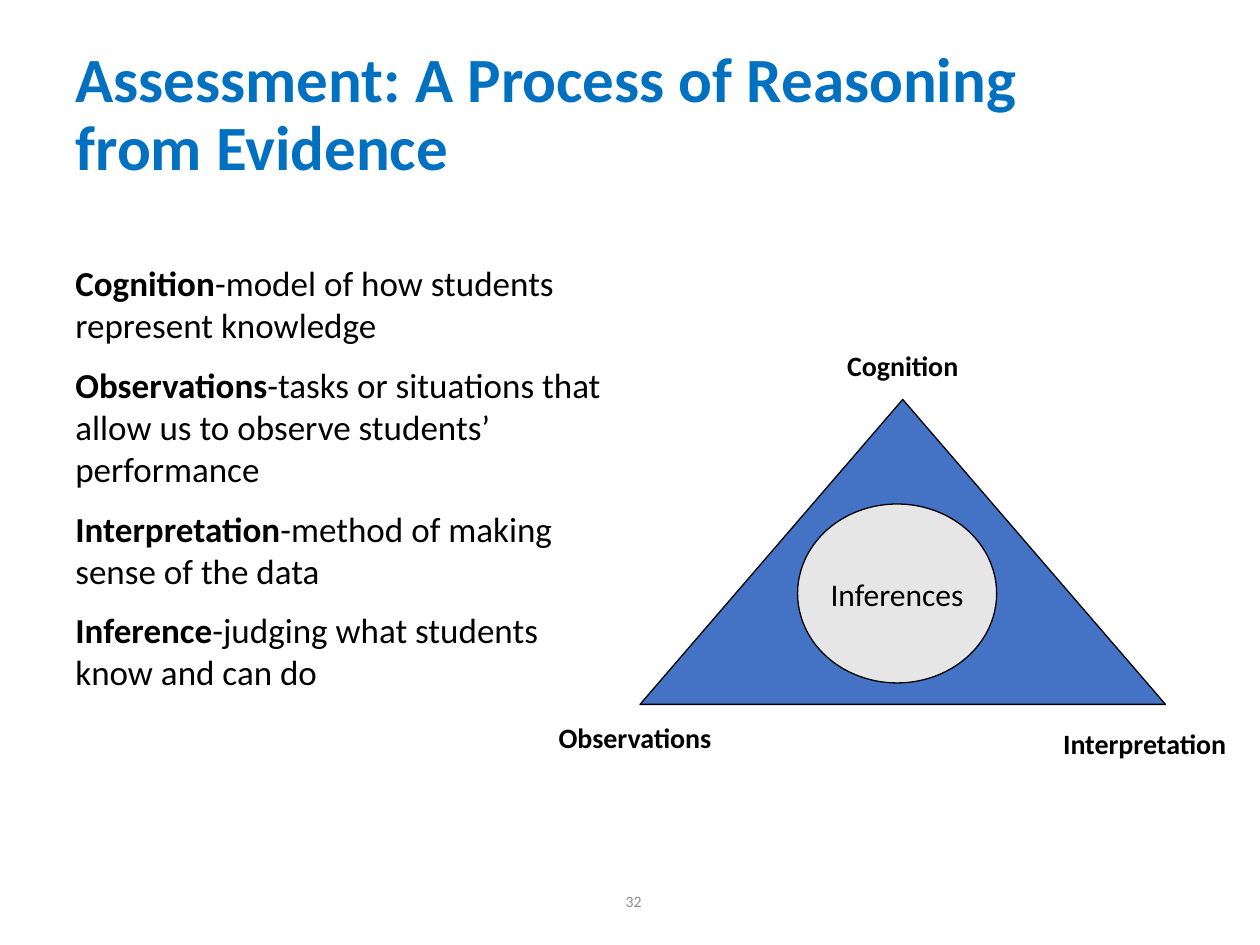
from pptx import Presentation
from pptx import util as u
from pptx.dml import color
from pptx.enum import shapes, text

FONT = "Calibri"
BLUE, BLACK, GREY = "0070C0", "000000", "8C8C8C"


def rgb(value):
    return color.RGBColor.from_string(value)


def add_span(para, words, size=16, bold=False, ink=BLACK):
    """Add one formatted run to a paragraph."""
    span = para.add_run()
    span.text = words
    span.font.name = FONT
    span.font.size = u.Pt(size)
    span.font.bold = bold
    span.font.color.rgb = rgb(ink)
    return span


class SlideBuilder:
    """Holds the style and the current slide."""

    def __init__(self, deck):
        self.page = deck.slides.add_slide(deck.slide_layouts[5])
        self.line_ink = BLACK
        self.line_width = u.Pt(0.75)

    def title(self, lines, left, top, width, height):
        box = self.page.shapes.title
        box.left, box.top = u.Inches(left), u.Inches(top)
        box.width, box.height = u.Inches(width), u.Inches(height)
        box.text_frame.word_wrap = True
        box.text_frame.vertical_anchor = text.MSO_ANCHOR.MIDDLE
        para = box.text_frame.paragraphs[0]
        para.alignment = text.PP_ALIGN.LEFT
        para.line_spacing = 0.9
        for index, line in enumerate(lines):
            if index:
                para.add_line_break()
            add_span(para, line, size=36, bold=True, ink=BLUE)

    def text_box(self, left, top, width, height, anchor=text.MSO_ANCHOR.TOP):
        box = self.page.shapes.add_textbox(
            u.Inches(left), u.Inches(top), u.Inches(width), u.Inches(height))
        box.text_frame.word_wrap = True
        box.text_frame.vertical_anchor = anchor
        return box.text_frame

    def label(self, words, left, top, width, height=0.37):
        para = self.text_box(left, top, width, height).paragraphs[0]
        para.alignment = text.PP_ALIGN.CENTER
        add_span(para, words, bold=True)

    def definitions(self, entries, left, top, width, height):
        frame = self.text_box(left, top, width, height)
        for index, (term, meaning) in enumerate(entries):
            para = frame.add_paragraph() if index else frame.paragraphs[0]
            if index:
                para.space_before = u.Pt(10)
            add_span(para, term, size=20, bold=True)
            add_span(para, "-" + meaning, size=20)

    def page_number(self, number, left, top, width, height):
        frame = self.text_box(left, top, width, height, text.MSO_ANCHOR.MIDDLE)
        para = frame.paragraphs[0]
        para.alignment = text.PP_ALIGN.RIGHT
        add_span(para, number, size=9, ink=GREY)

    def shape(self, kind, fill, left, top, width, height, words=""):
        shape = self.page.shapes.add_shape(
            kind, u.Inches(left), u.Inches(top), u.Inches(width), u.Inches(height))
        shape.shadow.inherit = False
        shape.fill.solid()
        shape.fill.fore_color.rgb = rgb(fill)
        shape.line.color.rgb = rgb(self.line_ink)
        shape.line.width = self.line_width
        if words:
            shape.text_frame.word_wrap = False
            shape.text_frame.vertical_anchor = text.MSO_ANCHOR.MIDDLE
            para = shape.text_frame.paragraphs[0]
            para.alignment = text.PP_ALIGN.CENTER
            add_span(para, words, size=18)


def main():
    deck = Presentation()
    deck.slide_width, deck.slide_height = u.Inches(10), u.Inches(7.5)
    builder = SlideBuilder(deck)

    # Title and page number
    builder.title(["Assessment: A Process of Reasoning", "from Evidence"],
                  0.5, 0.3, 9, 1.25)
    builder.page_number("32", 2.94, 6.95, 2.25, 0.4)

    # Definitions
    builder.definitions([
        ("Cognition", "model of how students represent knowledge"),
        ("Observations",
         "tasks or situations that allow us to observe students’ performance"),
        ("Interpretation", "method of making sense of the data"),
        ("Inference", "judging what students know and can do"),
    ], 0.5, 2.03, 4.5, 3.64)

    # Assessment triangle with its corner labels
    kinds = shapes.MSO_SHAPE
    builder.shape(kinds.ISOSCELES_TRIANGLE, "4472C4", 5.08, 3.17, 4.17, 2.42)
    builder.label("Cognition", 6.33, 2.72, 1.67)
    builder.label("Observations", 4.08, 5.67, 1.92)
    builder.label("Interpretation", 7.96, 5.72, 2.25)

    # Inferences at the centre
    builder.shape(kinds.OVAL, "E7E6E6", 6.33, 4, 1.58, 1.42, "Inferences")

    deck.save("out.pptx")


if __name__ == "__main__":
    main()
